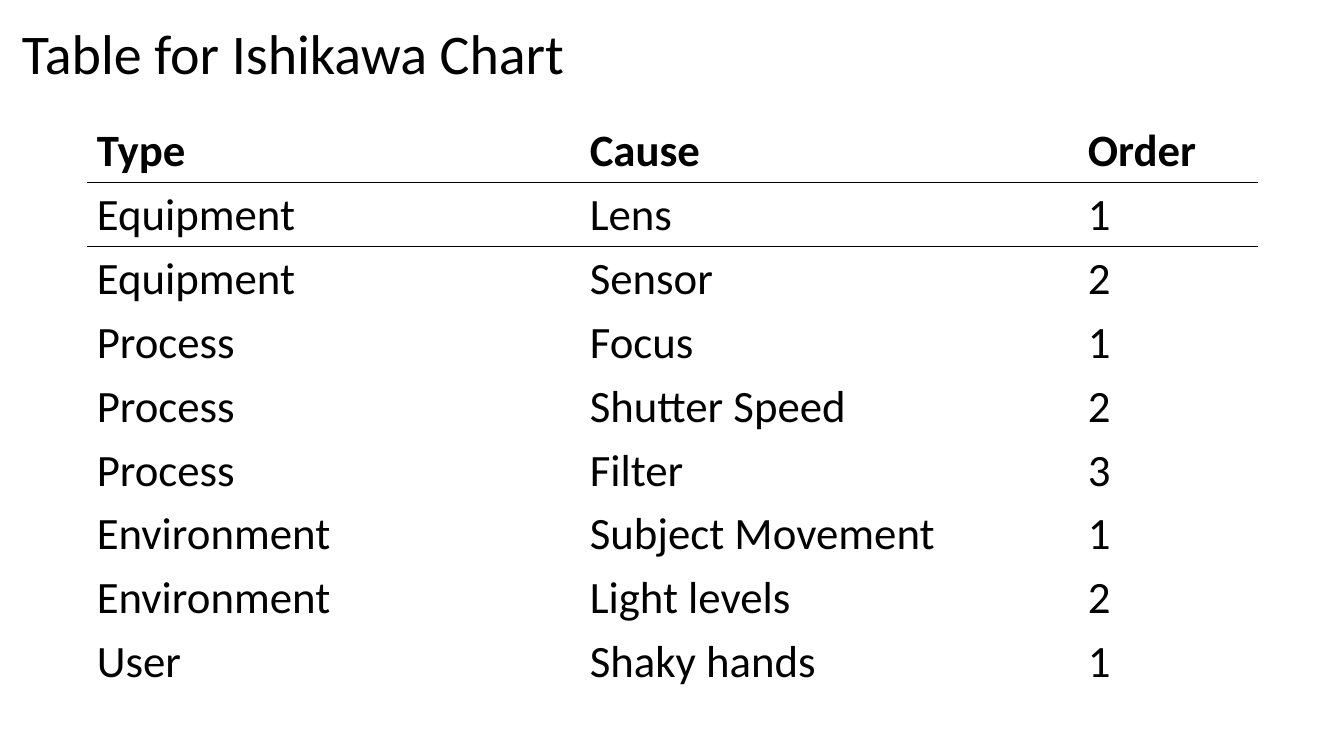
from lxml.etree import SubElement
from pptx import Presentation
from pptx.dml.color import RGBColor
from pptx.oxml import parse_xml
from pptx.oxml.ns import nsdecls, qn
from pptx.util import Inches, Pt

COLORS = {"text": "000000", "rule": "000000", "background": "FFFFFF"}
TITLE_FORMAT = {"name": "Calibri", "size": Pt(40), "bold": False}
HEADER_FORMAT = {"name": "Calibri", "size": Pt(32), "bold": True}
BODY_FORMAT = {**HEADER_FORMAT, "bold": False}
NO_STYLE_NO_GRID = "{2D5ABB26-0587-4C30-8999-92F81FD0307C}"
COLUMN_WIDTHS = (4.89, 4.94, 1.79)
RULED_ROWS = (0, 1)
CAUSES = (
    ("Type", "Cause", "Order"),
    ("Equipment", "Lens", "1"),
    ("Equipment", "Sensor", "2"),
    ("Process", "Focus", "1"),
    ("Process", "Shutter Speed", "2"),
    ("Process", "Filter", "3"),
    ("Environment", "Subject Movement", "1"),
    ("Environment", "Light levels", "2"),
    ("User", "Shaky hands", "1"),
)


def write_text(text_frame, text, format_values):
    """Write one formatted run into the first paragraph of a text frame."""
    run = text_frame.paragraphs[0].add_run()
    run.text = text
    for attribute, value in format_values.items():
        setattr(run.font, attribute, value)
    run.font.color.rgb = RGBColor.from_string(COLORS["text"])


def add_bottom_rule(cell):
    """Draw a one-point rule along the bottom of a table cell."""
    border = parse_xml(f'<a:lnB {nsdecls("a")} w="{Pt(1)}"/>')
    fill = SubElement(border, qn("a:solidFill"))
    SubElement(fill, qn("a:srgbClr"), val=COLORS["rule"])
    cell._tc.get_or_add_tcPr().insert(0, border)


def add_title(slide, left, top, width, height):
    """Place the slide title in the given box."""
    shape = slide.shapes.add_textbox(
        Inches(left), Inches(top), Inches(width), Inches(height)
    )
    shape.text_frame.word_wrap = True
    write_text(shape.text_frame, "Table for Ishikawa Chart", TITLE_FORMAT)


def add_cause_table(slide, left, top, width, height):
    """Place the table of causes in the given box."""
    shape = slide.shapes.add_table(
        len(CAUSES), len(COLUMN_WIDTHS),
        Inches(left), Inches(top), Inches(width), Inches(height),
    )
    table = shape.table
    table.horz_banding = False
    table._tbl.tblPr.find(qn("a:tableStyleId")).text = NO_STYLE_NO_GRID
    for column, column_width in zip(table.columns, COLUMN_WIDTHS):
        column.width = Inches(column_width)
    for row_index, values in enumerate(CAUSES):
        format_values = BODY_FORMAT if row_index else HEADER_FORMAT
        for column_index, value in enumerate(values):
            cell = table.cell(row_index, column_index)
            cell.fill.background()
            write_text(cell.text_frame, value, format_values)
            if row_index in RULED_ROWS:
                add_bottom_rule(cell)


def main():
    """Build and save the presentation."""
    presentation = Presentation()
    presentation.slide_width = Inches(13.33)
    presentation.slide_height = Inches(7.5)
    slide = presentation.slides.add_slide(presentation.slide_layouts[6])
    slide.background.fill.solid()
    slide.background.fill.fore_color.rgb = RGBColor.from_string(COLORS["background"])
    add_title(slide, 0.12, 0.13, 6.37, 0.77)
    add_cause_table(slide, 0.86, 1.18, sum(COLUMN_WIDTHS), 5.7)
    presentation.save("out.pptx")


if __name__ == "__main__":
    main()
